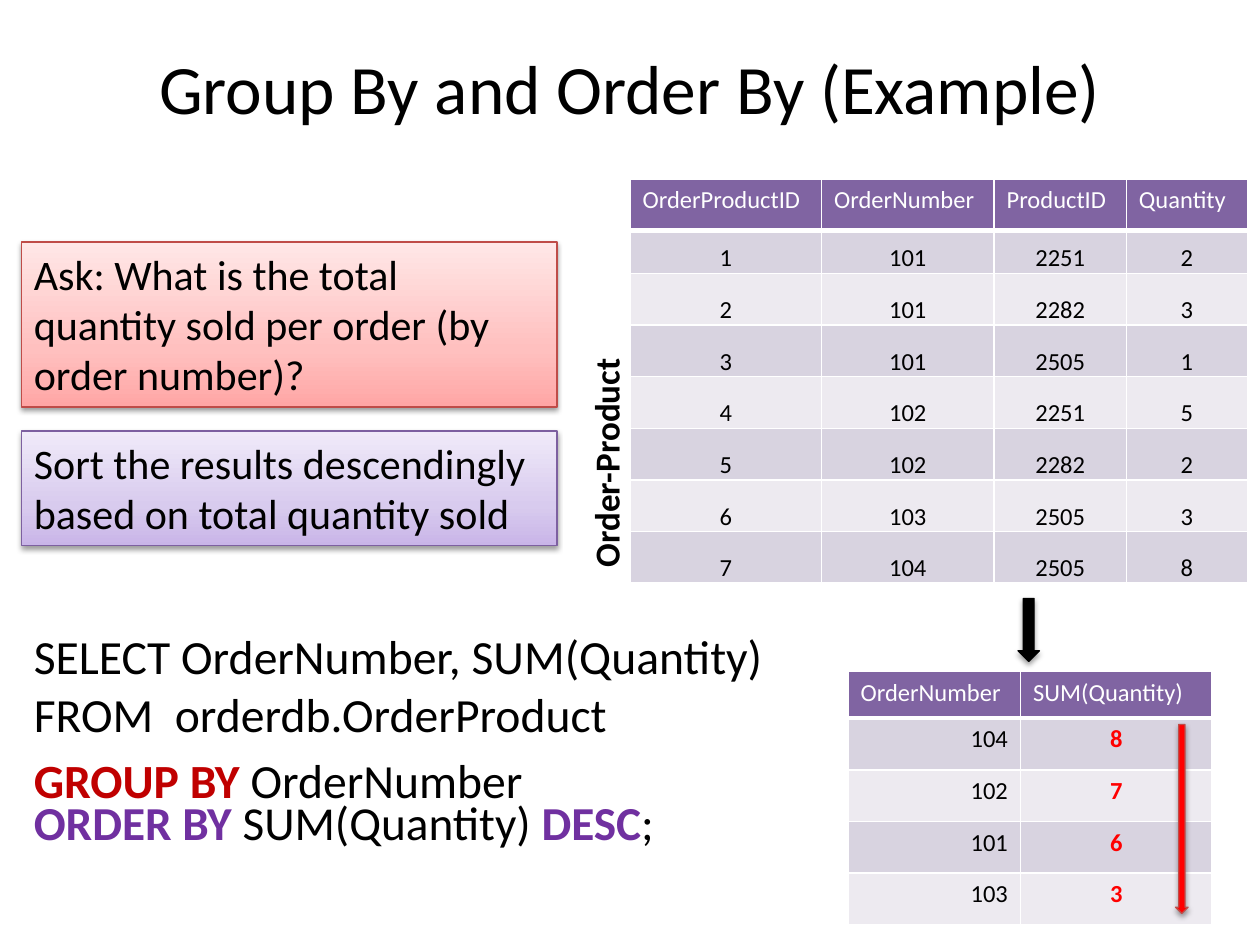
import dataclasses
import typing

import pptx
import pptx.dml.color
import pptx.enum.shapes
import pptx.enum.text
import pptx.oxml
import pptx.oxml.ns
import pptx.util

Inches = pptx.util.Inches
Pt = pptx.util.Pt
RGBColor = pptx.dml.color.RGBColor
Kind = pptx.enum.shapes.MSO_SHAPE
Align = pptx.enum.text.PP_ALIGN
Anchor = pptx.enum.text.MSO_ANCHOR

BLACK = RGBColor(0x00, 0x00, 0x00)
WHITE = RGBColor(0xFF, 0xFF, 0xFF)
RED = RGBColor(0xFF, 0x00, 0x00)
CRIMSON = RGBColor(0xC0, 0x00, 0x00)
BRICK = RGBColor(0xBF, 0x4C, 0x48)
PURPLE = RGBColor(0x70, 0x30, 0xA0)
PLUM = RGBColor(0x7D, 0x60, 0xA0)
HEAD = RGBColor(0x80, 0x64, 0xA2)
BANDS = (RGBColor(0xD8, 0xD3, 0xE0), RGBColor(0xED, 0xEA, 0xF0))
ROSE = (RGBColor(0xFF, 0xA6, 0xA5), RGBColor(0xFF, 0xC0, 0xBF), RGBColor(0xFF, 0xE7, 0xE7))
LILAC = (RGBColor(0xC9, 0xB5, 0xE8), RGBColor(0xD8, 0xCB, 0xEE), RGBColor(0xF0, 0xEA, 0xF9))

TIGHT = {
    "vertical_anchor": Anchor.BOTTOM,
    "margin_left": Inches(0.01),
    "margin_right": Inches(0.01),
    "margin_top": Inches(0.01),
    "margin_bottom": Inches(0),
}


@dataclasses.dataclass
class Run:
    text: str
    color: RGBColor = BLACK
    bold: bool = False


@dataclasses.dataclass
class Box:
    at: tuple
    lines: list
    size: float
    align: Align = Align.LEFT
    frame: dict = dataclasses.field(default_factory=dict)
    turn: float = 0


@dataclasses.dataclass
class Card:
    at: tuple
    text: str
    stops: tuple
    edge: RGBColor


@dataclasses.dataclass
class Arrow:
    at: tuple
    color: RGBColor
    edge: RGBColor


@dataclasses.dataclass
class Grid:
    at: tuple
    cols: list
    rows: list
    data: list
    looks: list
    cell: dict = dataclasses.field(default_factory=dict)


def apply(item: typing.Any, values: dict) -> None:
    for name, value in values.items():
        setattr(item, name, value)


def place(at: tuple) -> list:
    return [Inches(n) for n in at]


def node(xml: str) -> typing.Any:
    return pptx.oxml.parse_xml(xml.replace(" ", " " + pptx.oxml.ns.nsdecls("a") + " ", 1))


def write(para: typing.Any, runs: list, size: float, align: Align) -> None:
    para.alignment = align
    for part in runs:
        for i, piece in enumerate(part.text.split("\n")):
            if i:
                para.add_line_break()
            run = para.add_run()
            run.text = piece
            apply(run.font, {"name": "Calibri", "size": Pt(size), "bold": part.bold})
            run.font.color.rgb = part.color


def draw_box(slide: typing.Any, box: Box) -> None:
    shape = slide.shapes.add_textbox(*place(box.at))
    shape.rotation = box.turn
    frame = shape.text_frame
    apply(frame, {"word_wrap": True, **box.frame})
    for i, runs in enumerate(box.lines):
        para = frame.add_paragraph() if i else frame.paragraphs[0]
        if i:
            para.space_before = Pt(box.size * 0.2)
        write(para, runs, box.size, box.align)


def edge(shape: typing.Any, color: RGBColor) -> None:
    shape.line.color.rgb = color
    shape.line.width = Pt(0.75)
    shape.shadow.inherit = False
    shape.element.spPr.find(pptx.oxml.ns.qn("a:effectLst")).append(node(
        f'<a:outerShdw blurRad="{Pt(3.1)}" dist="{Pt(1.6)}" dir="5400000" rotWithShape="0">'
        '<a:srgbClr val="000000"><a:alpha val="38000"/></a:srgbClr></a:outerShdw>'))


def draw_card(slide: typing.Any, card: Card) -> None:
    shape = slide.shapes.add_shape(Kind.RECTANGLE, *place(card.at))
    shape.fill.gradient()
    shape.fill.gradient_angle = 90
    stops = shape.element.spPr.find(".//" + pptx.oxml.ns.qn("a:gsLst"))
    for old in list(stops):
        stops.remove(old)
    for spot, color in zip((0, 35, 100), card.stops):
        stops.append(node(f'<a:gs pos="{spot * 1000}"><a:srgbClr val="{color}"/></a:gs>'))
    edge(shape, card.edge)
    apply(shape.text_frame, {"word_wrap": True, "vertical_anchor": Anchor.TOP})
    write(shape.text_frame.paragraphs[0], [Run(card.text)], 24, Align.LEFT)


def draw_arrow(slide: typing.Any, arrow: Arrow) -> None:
    shape = slide.shapes.add_shape(Kind.DOWN_ARROW, *place(arrow.at))
    shape.fill.solid()
    shape.fill.fore_color.rgb = arrow.color
    edge(shape, arrow.edge)


def draw_grid(slide: typing.Any, grid: Grid) -> None:
    size = (sum(grid.cols), sum(grid.rows))
    table = slide.shapes.add_table(
        len(grid.rows), len(grid.cols), *place(grid.at + size)).table
    apply(table, {"first_row": False, "horz_banding": False})
    for col, width in zip(table.columns, grid.cols):
        col.width = Inches(width)
    for r, (row, height) in enumerate(zip(table.rows, grid.rows)):
        row.height = Inches(height)
        for c, cell in enumerate(row.cells):
            props = cell._tc.get_or_add_tcPr()
            for side in "LRTB":
                thick = 3 if (r, side) in ((0, "B"), (1, "T")) else 1
                props.append(node(
                    f'<a:ln{side} w="{Pt(thick)}"><a:solidFill>'
                    f'<a:srgbClr val="{WHITE}"/></a:solidFill></a:ln{side}>'))
            cell.fill.solid()
            cell.fill.fore_color.rgb = BANDS[(r - 1) % 2] if r else HEAD
            align, color, bold = grid.looks[c] if r else (Align.LEFT, WHITE, False)
            apply(cell, grid.cell if r else {})
            para = cell.text_frame.paragraphs[0]
            write(para, [Run(str(grid.data[r][c]), color, bold)], 14, align)


ITEMS = [
    Box((0.5, 0.3, 9, 0.78), [[Run("Group By and Order By (Example)")]], 39.6,
        Align.CENTER, {"vertical_anchor": Anchor.MIDDLE}),
    Grid((5, 1.42), [1.52, 1.37, 1.05, 0.96], [0.41, 0.34] + [0.41] * 6,
         [("OrderProductID", "OrderNumber", "ProductID", "Quantity"),
          (1, 101, 2251, 2), (2, 101, 2282, 3), (3, 101, 2505, 1), (4, 102, 2251, 5),
          (5, 102, 2282, 2), (6, 103, 2505, 3), (7, 104, 2505, 8)],
         [(Align.CENTER, BLACK, False)] * 4, TIGHT),
    Box((3.87, 3.44, 1.88, 0.44), [[Run("Order-Product", bold=True)]], 20,
        frame={"word_wrap": False}, turn=270),
    Card((0.17, 1.92, 4.25, 1.31),
         "Ask: What is the total quantity sold per order (by order number)?", ROSE, BRICK),
    Box((0.17, 4.93, 6.5, 1.7),
        [[Run("SELECT OrderNumber, SUM(Quantity) \nFROM  orderdb.OrderProduct")],
         [Run("GROUP BY ", CRIMSON, True), Run("OrderNumber")]], 27.2),
    Grid((6.73, 5.33), [1.37, 1.52], [0.37] + [0.41] * 4,
         [("OrderNumber", "SUM(Quantity)"), (104, 8), (102, 7), (101, 6), (103, 3)],
         [(Align.RIGHT, BLACK, False), (Align.CENTER, RED, True)]),
    Arrow((8.08, 4.75, 0.17, 0.5), BLACK, BLACK),
    Card((0.17, 3.42, 4.25, 0.91),
         "Sort the results descendingly based on total quantity sold", LILAC, PLUM),
    Box((0.17, 6.25, 6.5, 0.75),
        [[Run("ORDER BY ", PURPLE, True), Run("SUM(Quantity) "),
          Run("DESC", PURPLE, True), Run(";")]], 27),
    Arrow((9.33, 5.75, 0.1, 1.5), RED, BRICK),
]
DRAW = {Box: draw_box, Card: draw_card, Arrow: draw_arrow, Grid: draw_grid}


def main() -> None:
    deck = pptx.Presentation()
    apply(deck, {"slide_width": Inches(10), "slide_height": Inches(7.5)})
    slide = deck.slides.add_slide(deck.slide_layouts[6])
    for item in ITEMS:
        DRAW[type(item)](slide, item)
    deck.save("out.pptx")


if __name__ == "__main__":
    main()
